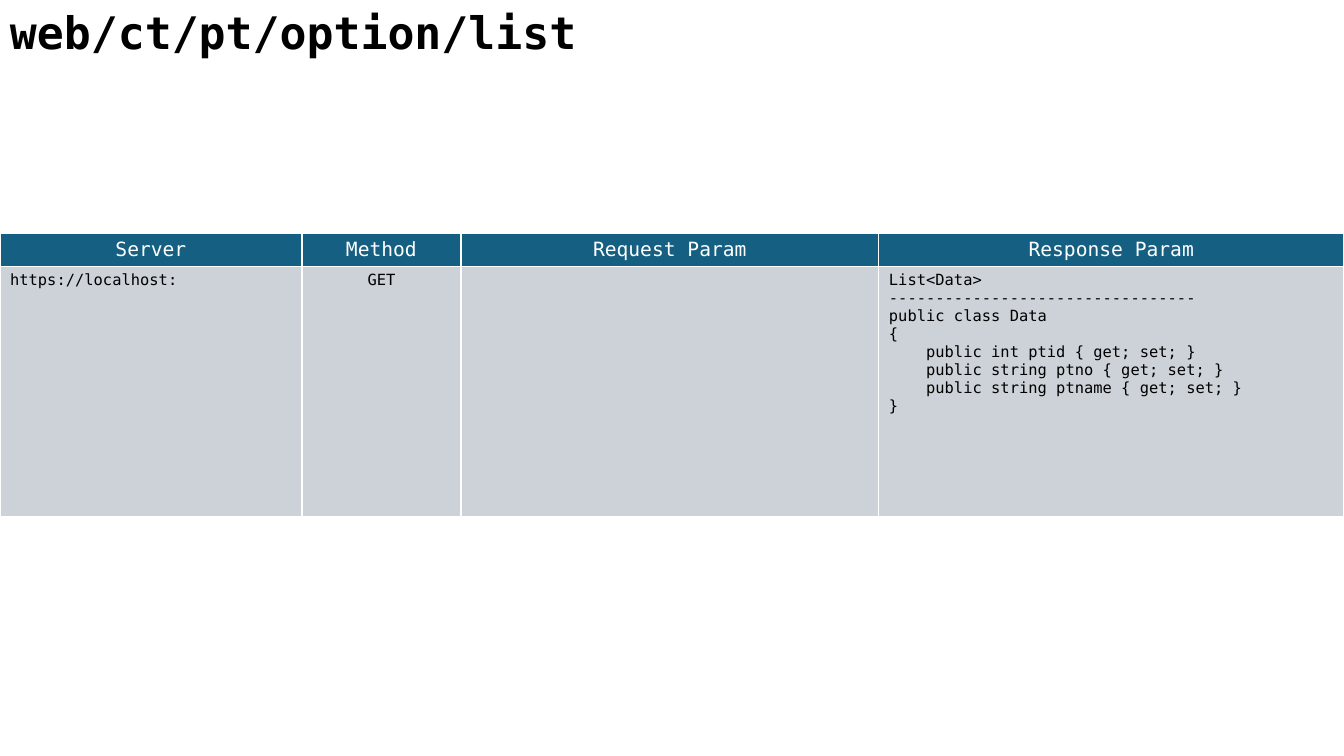
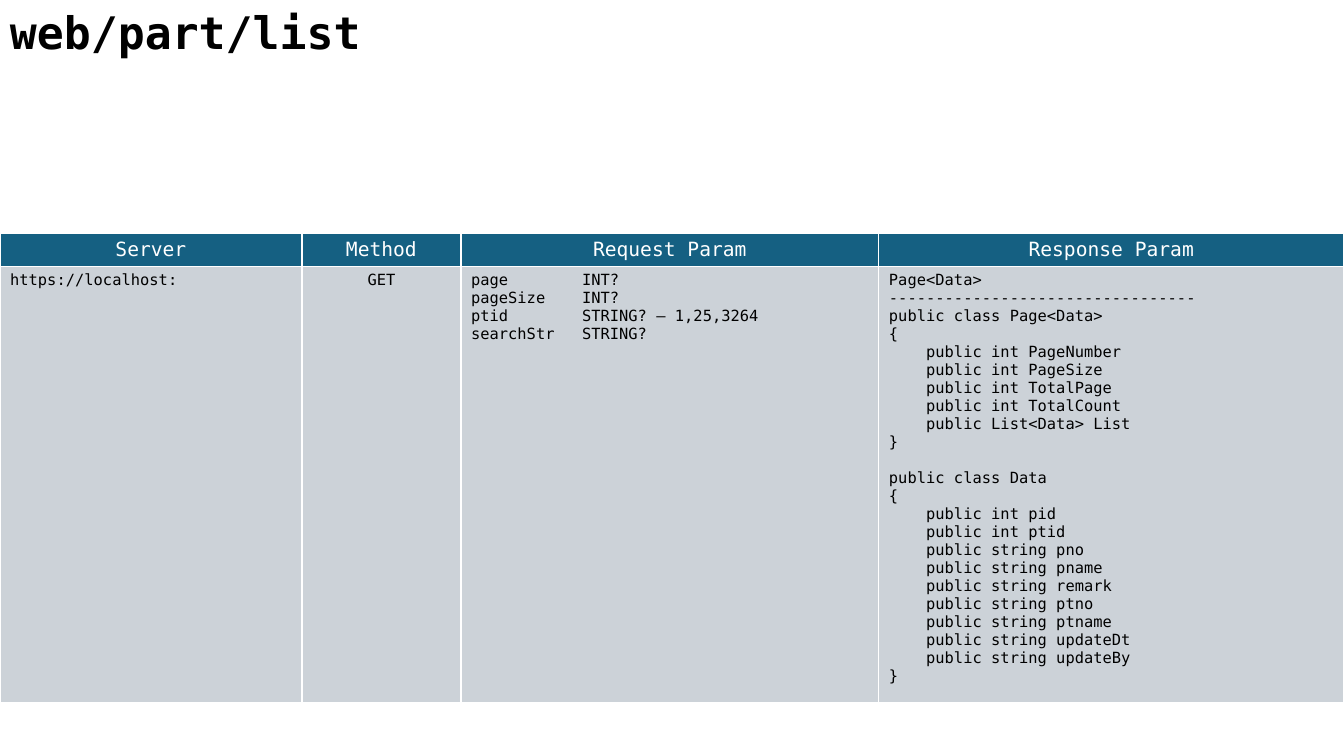
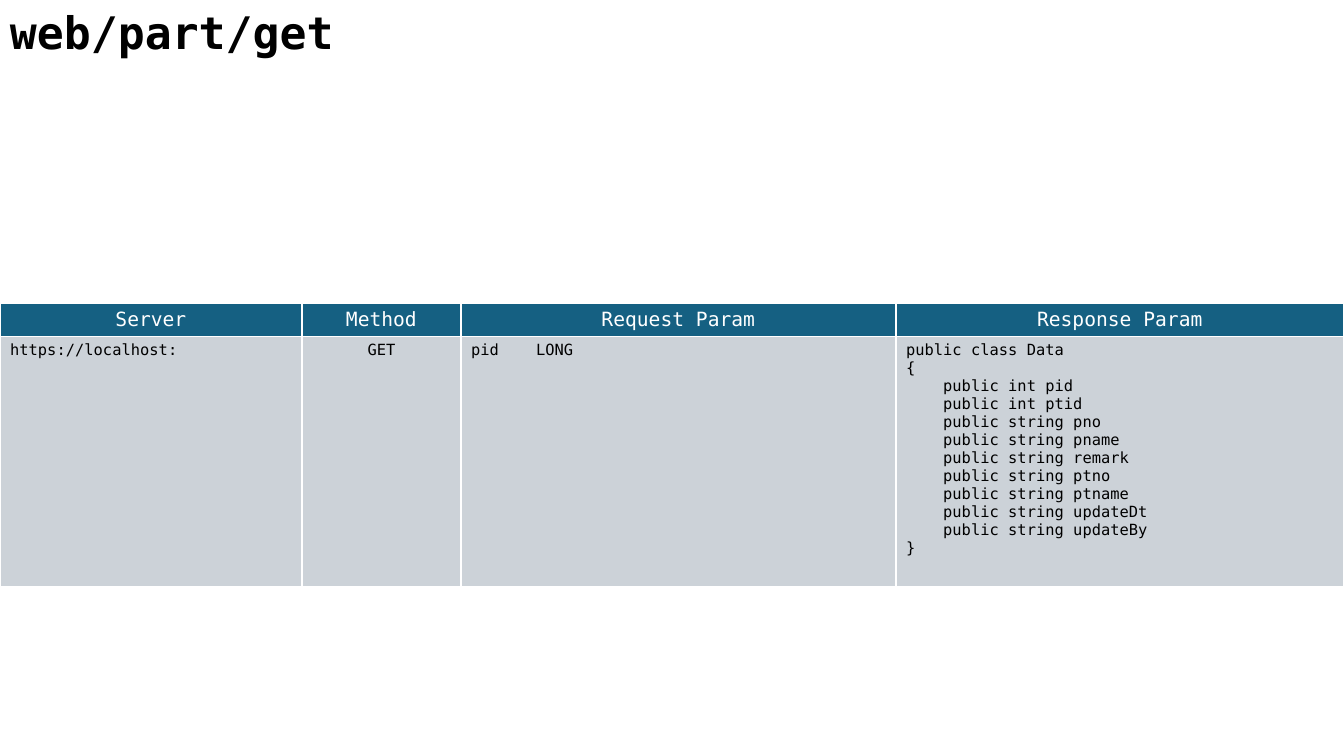
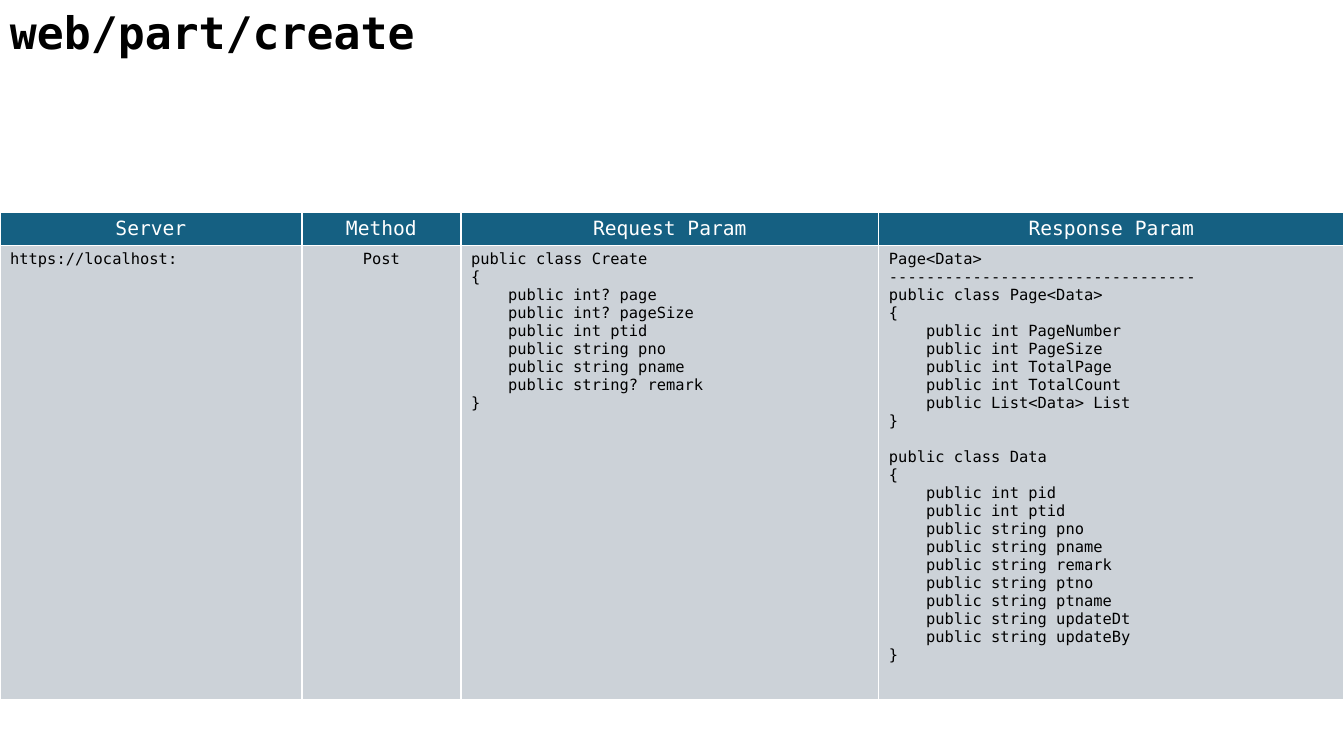
from lxml import etree
from pptx import Presentation
from pptx.dml.color import RGBColor
from pptx.enum.text import MSO_AUTO_SIZE, PP_ALIGN
from pptx.oxml.ns import qn
from pptx.util import Emu, Pt

# Shared style
SLIDE_WIDTH, SLIDE_HEIGHT = 1344, 756
EMU_PER_PX = 914400 / 100.8
FONT = "DejaVu Sans Mono"
BLACK = RGBColor(0x00, 0x00, 0x00)
WHITE = RGBColor(0xFF, 0xFF, 0xFF)
HEADER_FILL = RGBColor(0x15, 0x60, 0x82)
BODY_FILL = RGBColor(0xCC, 0xD2, 0xD8)
TITLE_SIZE, HEADER_SIZE, BODY_SIZE = Pt(32), Pt(14), Pt(11)
BLOCK_GAP = Pt(12.8)
LEFT, CENTER = PP_ALIGN.LEFT, PP_ALIGN.CENTER
GROW = MSO_AUTO_SIZE.SHAPE_TO_FIT_TEXT

HEADERS = ["Server", "Method", "Request Param", "Response Param"]
ALIGNMENTS = [LEFT, CENTER, LEFT, LEFT]
SERVER = "https://localhost:"
HEADER_HEIGHT = 33
SERVER_WIDTH, METHOD_WIDTH = 302, 159

# Code shown in the response column
RULE = "---------------------------------"
DATA_CLASS = """public class Data
{
    public int pid
    public int ptid
    public string pno
    public string pname
    public string remark
    public string ptno
    public string ptname
    public string updateDt
    public string updateBy
}"""
PAGE_CLASS = f"""Page<Data>
{RULE}
public class Page<Data>
{{
    public int PageNumber
    public int PageSize
    public int TotalPage
    public int TotalCount
    public List<Data> List
}}
{DATA_CLASS}"""
OPTION_CLASS = f"""List<Data>
{RULE}
public class Data
{{
    public int ptid {{ get; set; }}
    public string ptno {{ get; set; }}
    public string ptname {{ get; set; }}
}}"""

# Requests; names and types are parted by a tab
LIST_REQUEST = """page\tINT?
pageSize\tINT?
ptid\tSTRING? – 1,25,3264
searchStr\tSTRING?"""
CREATE_REQUEST = """public class Create
{
    public int? page
    public int? pageSize
    public int ptid
    public string pno
    public string pname
    public string? remark
}"""

# Title, table top, body height, request width, tab stop, method, request, response
ENDPOINTS = [
    ("web/ct/pt/option/list", 233, 250, 418, 0, "GET", "", OPTION_CLASS),
    ("web/part/list", 233, 436, 418, 111, "GET", LIST_REQUEST, PAGE_CLASS),
    ("web/part/get", 303, 250, 435, 65, "GET", "pid\tLONG", DATA_CLASS),
    ("web/part/create", 212, 454, 418, 0, "Post", CREATE_REQUEST, PAGE_CLASS),
]


def px(length):
    return Emu(round(length * EMU_PER_PX))


def write(text_frame, text, size, color, alignment=LEFT, bold=False, tab_stop=0):
    text_frame.text = text
    previous = ""
    for paragraph in text_frame.paragraphs:
        paragraph.alignment = alignment
        line = paragraph.text
        if previous == "}":
            paragraph.space_before = BLOCK_GAP
        if "\t" in line:
            properties = paragraph._p.get_or_add_pPr()
            tabs = etree.SubElement(properties, qn("a:tabLst"))
            etree.SubElement(tabs, qn("a:tab"), pos=str(px(tab_stop)), algn="l")
        if not line:
            paragraph.font.size = size
        for run in paragraph.runs:
            run.font.name = FONT
            run.font.size = size
            run.font.bold = bold
            run.font.color.rgb = color
        previous = line


presentation = Presentation()
presentation.slide_width = px(SLIDE_WIDTH)
presentation.slide_height = px(SLIDE_HEIGHT)
blank_layout = presentation.slide_layouts[6]

for title, top, body_height, request_width, tab_stop, method, request, response in ENDPOINTS:
    slide = presentation.slides.add_slide(blank_layout)

    # Title
    title_box = slide.shapes.add_textbox(0, 0, px(952), px(64))
    title_box.text_frame.word_wrap = True
    title_box.text_frame.auto_size = GROW
    write(title_box.text_frame, title, TITLE_SIZE, BLACK, bold=True)

    # Table grid
    table = slide.shapes.add_table(
        2, 4, 0, px(top), px(SLIDE_WIDTH), px(HEADER_HEIGHT + body_height)
    ).table
    response_width = SLIDE_WIDTH - SERVER_WIDTH - METHOD_WIDTH - request_width
    widths = [SERVER_WIDTH, METHOD_WIDTH, request_width, response_width]
    for column, width in zip(table.columns, widths):
        column.width = px(width)
    table.rows[0].height = px(HEADER_HEIGHT)
    table.rows[1].height = px(body_height)

    # Cells
    values = [SERVER, method, request, response]
    for index, (header, value, alignment) in enumerate(zip(HEADERS, values, ALIGNMENTS)):
        header_cell, body_cell = table.cell(0, index), table.cell(1, index)
        write(header_cell.text_frame, header, HEADER_SIZE, WHITE, CENTER)
        write(body_cell.text_frame, value, BODY_SIZE, BLACK, alignment, tab_stop=tab_stop)
        for cell, fill_color in ((header_cell, HEADER_FILL), (body_cell, BODY_FILL)):
            properties = cell._tc.get_or_add_tcPr()
            for side in ("a:lnL", "a:lnR", "a:lnT", "a:lnB"):
                border = etree.SubElement(properties, qn(side), w=str(Pt(1)))
                border_fill = etree.SubElement(border, qn("a:solidFill"))
                etree.SubElement(border_fill, qn("a:srgbClr"), val=str(WHITE))
            cell.fill.solid()
            cell.fill.fore_color.rgb = fill_color

presentation.save("out.pptx")
